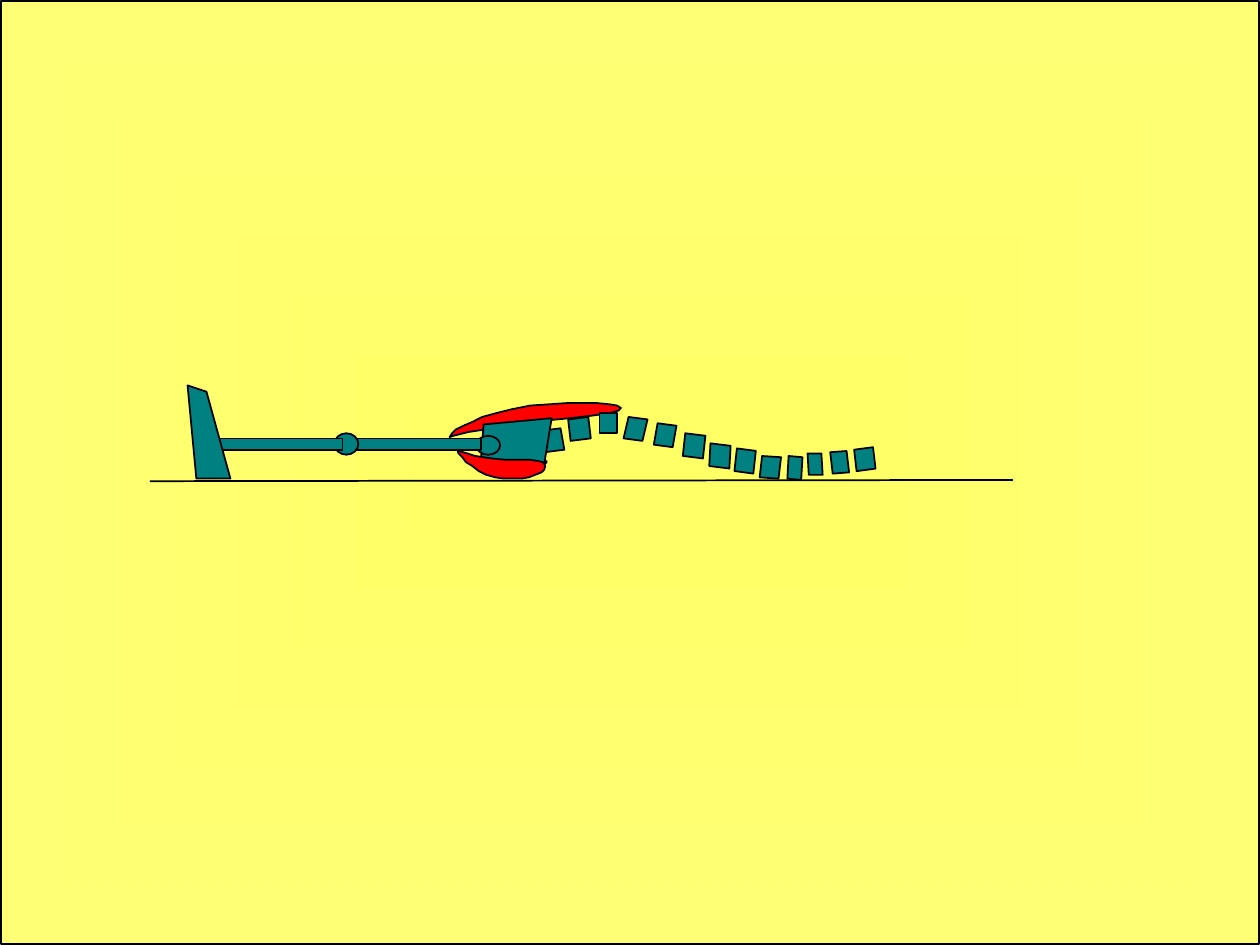
from math import cos, pi, sin

from lxml import etree
from pptx import Presentation
from pptx.dml.color import RGBColor
from pptx.enum.shapes import MSO_CONNECTOR, MSO_SHAPE
from pptx.oxml.ns import qn
from pptx.util import Cm, Pt

RECTANGLE = MSO_SHAPE.RECTANGLE
STRAIGHT = MSO_CONNECTOR.STRAIGHT

BLACK = RGBColor(0x00, 0x00, 0x00)
BONE = RGBColor(0x00, 0x80, 0x80)
MUSCLE = RGBColor(0xFF, 0x00, 0x00)
YELLOW = RGBColor(0xFF, 0xFF, 0x66)
PALE_YELLOW = RGBColor(0xFF, 0xFF, 0x76)

GRID = Cm(0.0254)

BACK_MUSCLE = [
    (241, 40), (253, 37), (266, 35), (278, 33), (290, 31), (313, 28), (334, 26),
    (351, 24), (365, 22), (372, 20), (374, 18), (371, 16), (365, 15), (355, 14),
    (344, 14), (331, 14), (317, 15), (302, 16), (287, 19), (275, 22), (264, 25),
    (256, 29), (249, 32), (243, 35), (240, 38), (238, 41),
]
FRONT_MUSCLE = [
    (245, 52), (252, 54), (258, 56), (271, 58), (282, 59), (293, 59), (301, 59),
    (308, 60), (312, 61), (314, 64), (313, 67), (311, 69), (306, 71), (301, 73),
    (295, 74), (288, 74), (281, 74), (274, 73), (267, 71), (261, 68), (256, 64),
    (251, 61), (248, 57), (245, 54), (244, 51),
]
PELVIS = [(311, 64), (263, 57), (265, 31), (319, 26), (313, 63), (315, 61), (315, 60)]
FOOT = [(61, 74), (37, 74), (30, 0), (45, 5), (64, 74)]

# Each vertebra: top-left corner, top edge vector, left edge vector.
VERTEBRAE = [
    ((310, 36), (16, -2), (3, 17)),
    ((332, 27), (16, -2), (2, 17)),
    ((380, 25), (15, 2), (-4, 17)),
    ((403, 30), (15, 2), (-3, 17)),
    ((425, 38), (16, 2), (-2, 18)),
    ((445, 46), (16, 2), (-1, 18)),
    ((466, 50), (15, 2), (-2, 18)),
    ((486, 56), (15, 1), (-2, 17)),
    ((507, 56), (11, 1), (-1, 18)),
    ((522, 54), (11, 0), (1, 17)),
    ((540, 53), (13, -1), (2, 17)),
    ((559, 51), (15, -2), (2, 17)),
]


def outline(part):
    part.shadow.inherit = False
    part.line.color.rgb = BLACK
    part.line.width = Pt(1)


def add_backdrop(slide, left, top, width, height):
    backdrop = slide.shapes.add_shape(RECTANGLE, left, top, width, height)
    outline(backdrop)
    backdrop.fill.gradient()
    for stop, color in zip(backdrop.fill.gradient_stops, (YELLOW, PALE_YELLOW)):
        stop.color.rgb = color
    gradient = backdrop.element.spPr.find(qn("a:gradFill"))
    gradient.remove(gradient.find(qn("a:lin")))
    radial = etree.SubElement(gradient, qn("a:path"), {"path": "shape"})
    center = {side: "50000" for side in "ltrb"}
    etree.SubElement(radial, qn("a:fillToRect"), center)


def add_skeleton(slide, left, top):
    parts = slide.shapes.add_group_shape().shapes

    def place(x, y):
        return round(left + x * GRID), round(top + y * GRID)

    def finish(part, color):
        outline(part)
        part.fill.solid()
        part.fill.fore_color.rgb = color

    def add_outline(points, color):
        start, *rest = [place(x, y) for x, y in points]
        builder = parts.build_freeform(*start)
        builder.add_line_segments(rest, close=True)
        finish(builder.convert_to_shape(), color)

    def add_bar(x, y, width, height):
        bar = parts.add_shape(RECTANGLE, *place(x, y), width * GRID, height * GRID)
        finish(bar, BONE)

    def add_joint(x, y, radius_x, radius_y):
        angles = [step * pi / 8 for step in range(16)]
        rim = [(x + radius_x * cos(a), y - radius_y * sin(a)) for a in angles]
        add_outline(rim, BONE)

    add_outline(BACK_MUSCLE, MUSCLE)
    for (x, y), (across_x, across_y), (down_x, down_y) in VERTEBRAE:
        add_outline([
            (x, y),
            (x + across_x, y + across_y),
            (x + across_x + down_x, y + across_y + down_y),
            (x + down_x, y + down_y),
        ], BONE)
    add_bar(357, 22, 14, 16)
    add_outline(PELVIS, BONE)
    add_joint(268.5, 47.5, 9.5, 7.5)
    add_bar(164, 42, 99, 9)
    add_joint(156, 46.5, 9.5, 8.5)
    add_bar(54, 42, 99, 9)

    ground = parts.add_connector(STRAIGHT, *place(0, 76), *place(685, 75))
    ground.line.color.rgb = BLACK
    ground.line.width = Pt(1)
    etree.SubElement(ground.element.spPr, qn("a:effectLst"))

    add_outline(FRONT_MUSCLE, MUSCLE)
    add_outline(FOOT, BONE)


def main():
    deck = Presentation()
    deck.slide_width, deck.slide_height = Cm(25.4), Cm(19.05)
    slide = deck.slides.add_slide(deck.slide_layouts[6])
    add_backdrop(slide, Cm(0.02), Cm(0.02), Cm(25.36), Cm(19.01))
    add_skeleton(slide, Cm(3.02), Cm(7.77))
    deck.save("out.pptx")


if __name__ == "__main__":
    main()
